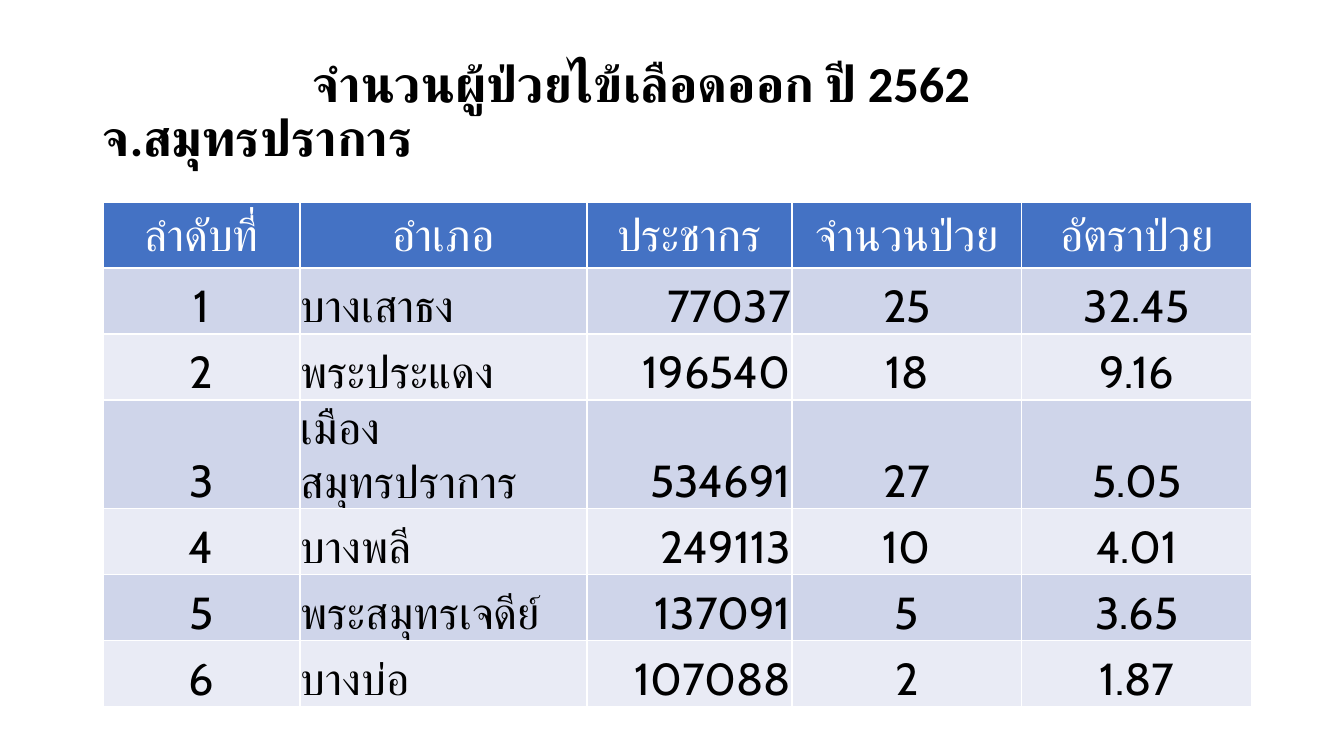
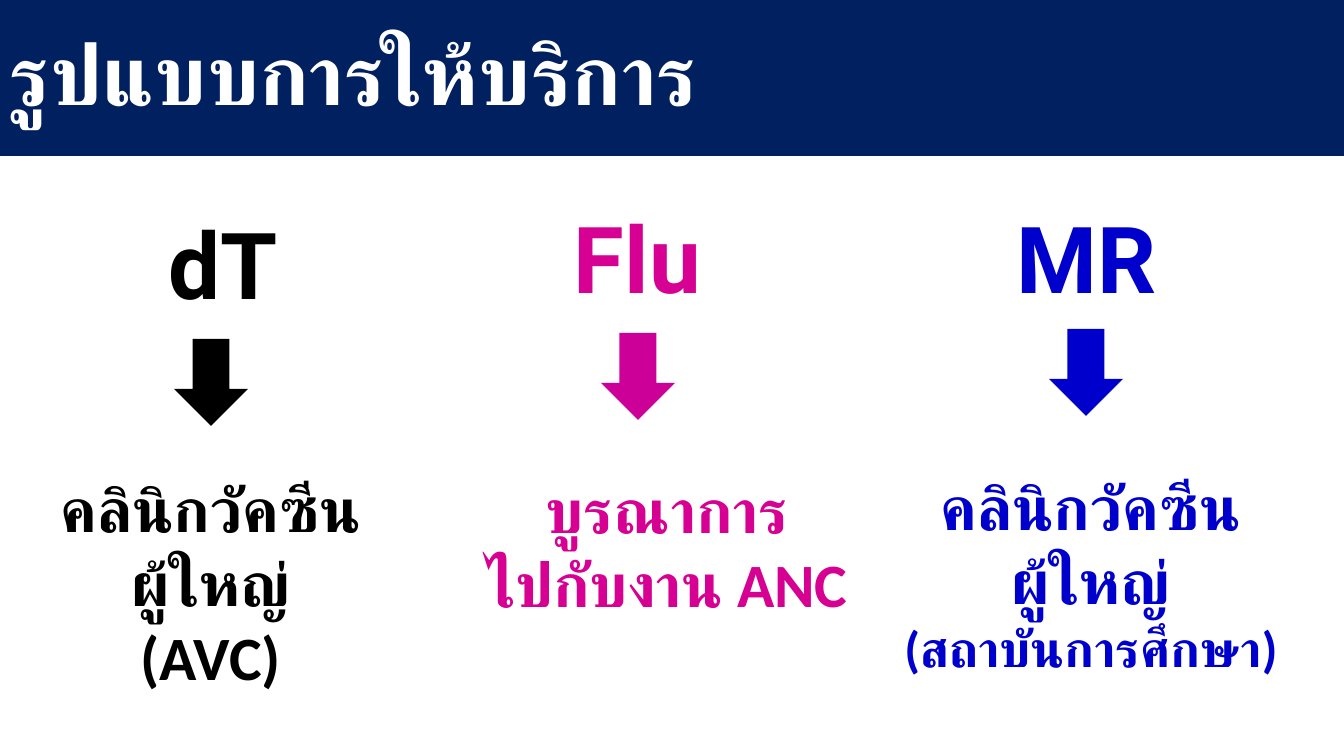
from pptx import Presentation, util as u
from pptx.dml.color import RGBColor
from pptx.enum import lang, shapes, text
from pptx.oxml.ns import qn

PX = 914400 / 100.8
WHITE = RGBColor(0xFF, 0xFF, 0xFF)
BLACK = RGBColor(0, 0, 0)
NAVY = RGBColor(0x00, 0x20, 0x60)
BLUE = RGBColor(0x44, 0x72, 0xC4)
BAND = [RGBColor(0xE9, 0xEB, 0xF5), RGBColor(0xCF, 0xD5, 0xEA)]
PINK = RGBColor(0xD6, 0x00, 0x93)
MAGENTA = RGBColor(0xCC, 0x00, 0x99)
ROYAL = RGBColor(0x00, 0x00, 0xCC)
LEFT, CENTER, RIGHT = text.PP_ALIGN.LEFT, text.PP_ALIGN.CENTER, text.PP_ALIGN.RIGHT
MIDDLE, BOTTOM = text.MSO_ANCHOR.MIDDLE, text.MSO_ANCHOR.BOTTOM


def px(*lengths):
    return [u.Emu(round(n * PX)) for n in lengths]


def write(tf, lines, sizes, color, font="Calibri", bold=True, align=LEFT, spacing=None, indent=0):
    tf.word_wrap = True
    for i, (line, size) in enumerate(zip(lines, sizes)):
        p = tf.paragraphs[0] if i == 0 else tf.add_paragraph()
        p.alignment = align
        p.line_spacing = spacing
        if indent:
            p._p.get_or_add_pPr().set("indent", str(px(indent)[0]))
        r = p.add_run()
        r.text = line
        f = r.font
        f.name, f.size, f.bold = font, u.Pt(size), bold
        f.color.rgb = color
        f.language_id = lang.MSO_LANGUAGE_ID.THAI
        cs = r._r.get_or_add_rPr().makeelement(qn("a:cs"), {"typeface": font})
        f._element.find(qn("a:latin")).addnext(cs)


prs = Presentation()
prs.slide_width, prs.slide_height = px(1344, 756)
blank = prs.slide_layouts[6]

s = prs.slides.add_slide(blank)
tf = s.shapes.add_textbox(*px(93, 40, 1159, 146)).text_frame
tf.vertical_anchor = MIDDLE
write(tf, ["จำนวนผู้ป่วยไข้เลือดออก ปี 2562 จ.สมุทรปราการ"], [36], BLACK, spacing=0.9, indent=210)

rows = [
    ("ลำดับที่", "อำเภอ", "ประชากร", "จำนวนป่วย", "อัตราป่วย"),
    ("1", "บางเสาธง", "77037", "25", "32.45"),
    ("2", "พระประแดง", "196540", "18", "9.16"),
    ("3", "เมืองสมุทรปราการ", "534691", "27", "5.05"),
    ("4", "บางพลี", "249113", "10", "4.01"),
    ("5", "พระสมุทรเจดีย์", "137091", "5", "3.65"),
    ("6", "บางบ่อ", "107088", "2", "1.87"),
]
widths = [197, 287, 205, 230, 230]
aligns = [CENTER, LEFT, RIGHT, CENTER, CENTER]
row_h = 66
tbl = s.shapes.add_table(len(rows), len(widths), *px(103, 202, sum(widths), row_h * len(rows))).table
for col, width in zip(tbl.columns, px(*widths)):
    col.width = width
for i, row in enumerate(rows):
    tbl.rows[i].height = px(row_h)[0]
    for j, value in enumerate(row):
        cell = tbl.cell(i, j)
        cell.margin_left, cell.margin_top, cell.margin_right, cell.margin_bottom = px(1, 1, 1, 0)
        cell.vertical_anchor = BOTTOM if i else MIDDLE
        cell.fill.solid()
        cell.fill.fore_color.rgb = BAND[i % 2] if i else BLUE
        write(cell.text_frame, [value], [32], BLACK if i else WHITE, font="Cabin",
              bold=False, align=aligns[j] if i else CENTER)

s = prs.slides.add_slide(blank)
sp = s.shapes.add_shape(shapes.MSO_SHAPE.RECTANGLE, *px(0, 0, 1344, 156))
sp.shadow.inherit = False
sp.fill.solid()
sp.fill.fore_color.rgb = NAVY
sp.line.fill.background()
sp.text_frame.vertical_anchor = MIDDLE
write(sp.text_frame, ["รูปแบบการให้บริการ"], [60], WHITE, spacing=0.9)

services = [
    ("dT", ["คลินิกวัคซีนผู้ใหญ่", "(AVC)"], [44, 44], BLACK, BLACK, (119, 202), (174, 339), (5, 466)),
    ("Flu", ["บูรณาการ", "ไปกับงาน ANC"], [44, 44], PINK, MAGENTA, (533, 196), (601, 333), (461, 467)),
    ("MR", ["คลินิกวัคซีนผู้ใหญ่", "(สถาบันการศึกษา)"], [44, 36], ROYAL, ROYAL, (982, 196), (1049, 329), (885, 464)),
]
for name, lines, sizes, color, arrow_color, name_at, arrow_at, lines_at in services:
    sp = s.shapes.add_shape(shapes.MSO_SHAPE.DOWN_ARROW, *px(*arrow_at, 74, 87))
    sp.shadow.inherit = False
    sp.fill.solid()
    sp.fill.fore_color.rgb = arrow_color
    sp.line.fill.background()
    for at, size, content, points, font in [
        (name_at, (209, 122), [name], [66], "Roboto"),
        (lines_at, (412, 159), lines, sizes, "Calibri"),
    ]:
        tf = s.shapes.add_textbox(*px(*at, *size)).text_frame
        tf.auto_size = text.MSO_AUTO_SIZE.SHAPE_TO_FIT_TEXT
        write(tf, content, points, color, font=font, align=CENTER)

prs.save("out.pptx")
